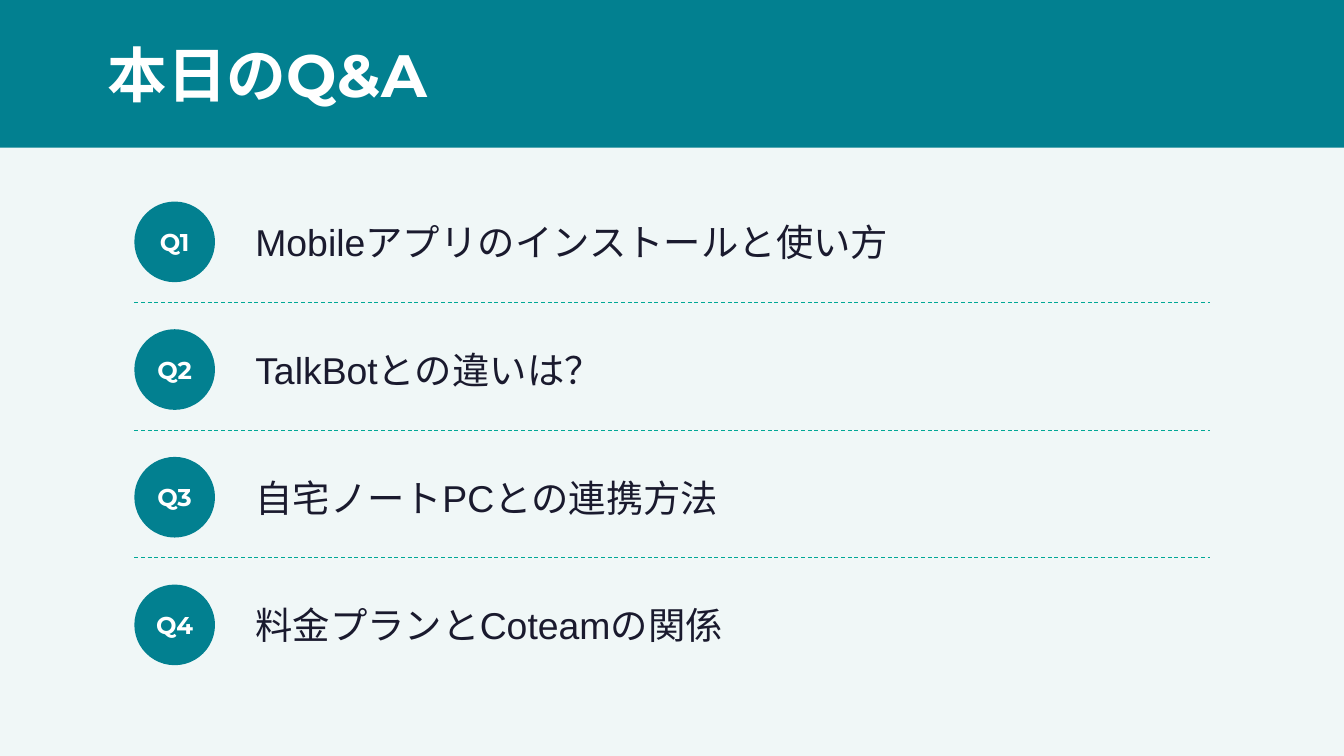
from pptx import Presentation
from pptx.dml.color import RGBColor
from pptx.enum.dml import MSO_LINE
from pptx.enum.shapes import MSO_CONNECTOR, MSO_SHAPE
from pptx.enum.text import MSO_ANCHOR, MSO_AUTO_SIZE, PP_ALIGN
from pptx.oxml.ns import qn
from pptx.util import Inches, Pt
from lxml import etree

STRAIGHT = MSO_CONNECTOR.STRAIGHT
RECTANGLE = MSO_SHAPE.RECTANGLE
OVAL = MSO_SHAPE.OVAL
DASH = MSO_LINE.DASH
MIDDLE = MSO_ANCHOR.MIDDLE
NO_AUTOFIT = MSO_AUTO_SIZE.NONE
LEFT = PP_ALIGN.LEFT
CENTER = PP_ALIGN.CENTER

TEAL = "028090"
MINT = "00A896"
PALE = "F0F7F7"
NAVY = "1A1A2E"
WHITE = "FFFFFF"

QUESTIONS = [
    "Mobileアプリのインストールと使い方",
    "TalkBotとの違いは？",
    "自宅ノートPCとの連携方法",
    "料金プランとCoteamの関係",
]
SLIDE_WIDTH = 10
FIRST_TOP = 1.5
ROW_STEP = 0.95
ROW_HEIGHT = 0.6
RULE_OFFSET = 0.75


def color(value):
    return RGBColor.from_string(value)


def write_text(shape, text, size, font="Arial", fill=NAVY, bold=False, align=LEFT):
    frame = shape.text_frame
    frame.word_wrap = True
    frame.auto_size = NO_AUTOFIT
    frame.vertical_anchor = MIDDLE
    frame.margin_left = frame.margin_right = 0
    frame.margin_top = frame.margin_bottom = 0
    paragraph = frame.paragraphs[0]
    paragraph.alignment = align
    run = paragraph.add_run()
    run.text = text
    run.font.name = font
    run.font.size = Pt(size)
    run.font.bold = bold
    run.font.color.rgb = color(fill)


def add_filled_shape(slide, kind, left, top, width, height):
    shape = slide.shapes.add_shape(
        kind, Inches(left), Inches(top), Inches(width), Inches(height))
    shape.shadow.inherit = False
    shape.fill.solid()
    shape.fill.fore_color.rgb = color(TEAL)
    shape.line.fill.background()
    return shape


def add_title(slide, text):
    title = slide.shapes.title
    title.left, title.top = Inches(0.8), Inches(0.15)
    title.width, title.height = Inches(8), Inches(0.8)
    write_text(title, text, 32, font="Montserrat", fill=WHITE, bold=True)
    title.element.getparent().append(title.element)


def add_question(slide, number, text, top):
    badge = add_filled_shape(slide, OVAL, 1, top, ROW_HEIGHT, ROW_HEIGHT)
    write_text(badge, f"Q{number}", 13, font="Montserrat", fill=WHITE,
               bold=True, align=CENTER)
    box = slide.shapes.add_textbox(
        Inches(1.9), Inches(top), Inches(7), Inches(ROW_HEIGHT))
    write_text(box, text, 20)


def add_rule(slide, top):
    rule = slide.shapes.add_connector(
        STRAIGHT, Inches(1), Inches(top), Inches(9), Inches(top))
    rule.line.color.rgb = color(MINT)
    rule.line.width = Pt(0.5)
    rule.line.dash_style = DASH
    etree.SubElement(rule.element.spPr, qn("a:effectLst"))


def main():
    presentation = Presentation()
    presentation.slide_width = Inches(SLIDE_WIDTH)
    presentation.slide_height = Inches(SLIDE_WIDTH * 9 / 16)
    slide = presentation.slides.add_slide(presentation.slide_layouts[5])
    slide.background.fill.solid()
    slide.background.fill.fore_color.rgb = color(PALE)

    add_filled_shape(slide, RECTANGLE, 0, 0, SLIDE_WIDTH, 1.1)
    add_title(slide, "本日のQ&A")
    for index, question in enumerate(QUESTIONS):
        top = FIRST_TOP + index * ROW_STEP
        add_question(slide, index + 1, question, top)
        if index < len(QUESTIONS) - 1:
            add_rule(slide, top + RULE_OFFSET)

    presentation.save("out.pptx")


if __name__ == "__main__":
    main()
